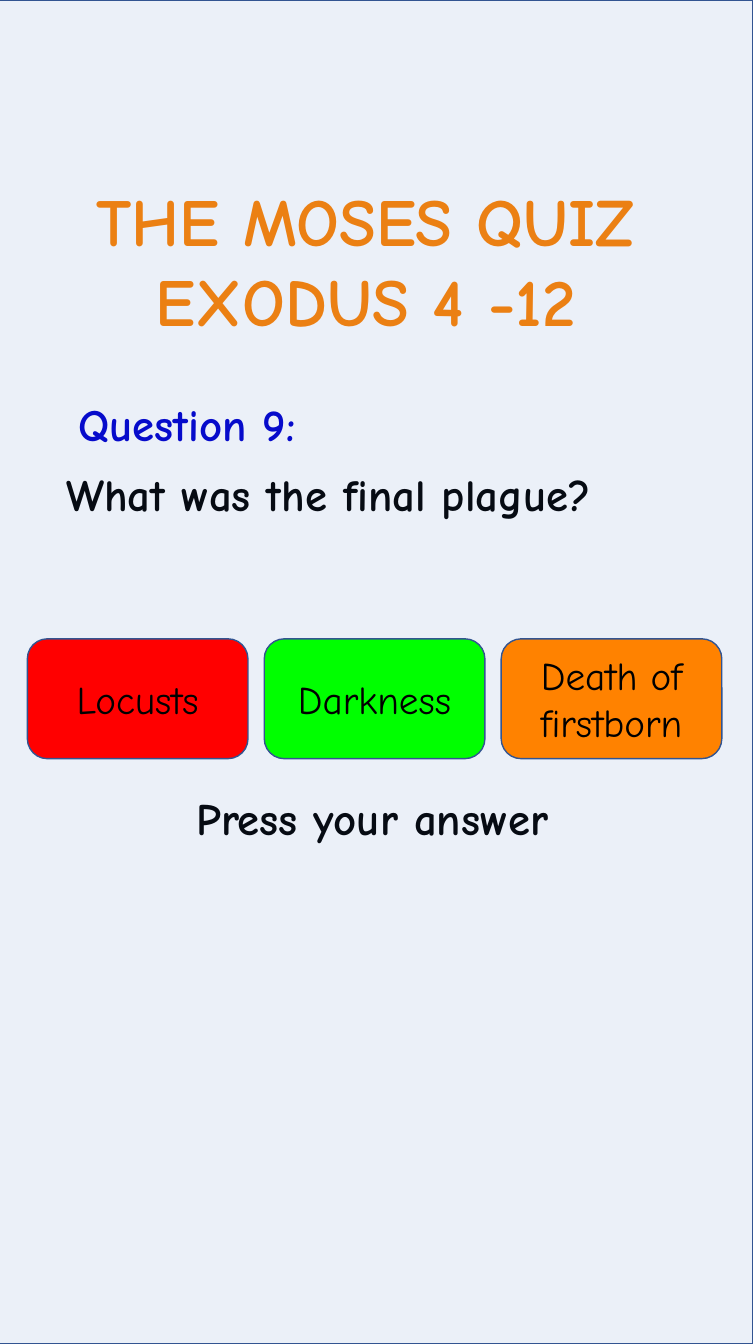
from dataclasses import dataclass

from lxml.etree import SubElement
from pptx import Presentation
from pptx.dml.color import RGBColor
from pptx.enum.shapes import MSO_SHAPE as Preset
from pptx.enum.text import MSO_ANCHOR as Anchor, MSO_AUTO_SIZE as AutoSize, PP_ALIGN as Align
from pptx.oxml import parse_xml
from pptx.oxml.ns import nsdecls, qn
from pptx.util import Cm, Pt

COLORS = {
    "paper": "FFFFFF",
    "veil": "4472C4",
    "border": "325491",
    "orange": "FF8200",
    "red": "FF0000",
    "green": "00FF00",
    "blue": "0000CC",
    "black": "000000",
}
FONT = "Comic Neue"
SLIDE_WIDTH, SLIDE_HEIGHT = Cm(19.05), Cm(33.87)
ANSWER_LEFT, ANSWER_TOP, ANSWER_PITCH = 0.69, 16.1, 5.97
ANSWER_WIDTH, ANSWER_HEIGHT = 5.56, 3.02


@dataclass
class Caption:
    lines: list[str]
    left: float
    top: float
    width: float
    height: float
    color: str
    paragraph_format: dict
    size: int = 32
    wraps: bool = True
    outline: str | None = None


@dataclass
class Answer:
    text: str
    color: str


CAPTIONS = [
    Caption(["THE MOSES QUIZ ", "EXODUS 4 -12 "], 0.76, 4.39, 17.5, 4.37, "orange",
            {"alignment": Align.CENTER}, size=48, wraps=False, outline="red"),
    Caption(["Question 9:"], 1.19, 9.88, 7.04, 1.63, "blue",
            {"alignment": Align.CENTER}, wraps=False),
    Caption(["What was the final plague?"], 1.42, 11.58, 16.15, 3.71, "black",
            {"line_spacing": Pt(40), "space_before": Pt(7.5)}),
    Caption(["Press your answer"], 4.7, 19.96, 10.72, 1.83, "black",
            {"line_spacing": 0.9, "space_before": Pt(7.5)}),
]
ANSWERS = [
    Answer("Locusts", "red"),
    Answer("Darkness", "green"),
    Answer("Death of firstborn", "orange"),
]


def rgb(name: str) -> RGBColor:
    return RGBColor.from_string(COLORS[name])


def set_all(target, values: dict) -> None:
    for name, value in values.items():
        setattr(target, name, value)


def add_text(para, text: str, size: int, color: str, bold: bool, outline: str | None = None) -> None:
    span = para.add_run()
    span.text = text
    set_all(span.font, {"name": FONT, "size": Pt(size), "bold": bold})
    span.font.color.rgb = rgb(color)
    if outline:
        span.font._element.insert(0, parse_xml(
            f'<a:ln {nsdecls("a")} w="{Pt(1.06)}"><a:solidFill>'
            f'<a:srgbClr val="{COLORS[outline]}"/></a:solidFill></a:ln>'))


def add_caption(page, caption: Caption) -> None:
    box = page.shapes.add_textbox(
        Cm(caption.left), Cm(caption.top), Cm(caption.width), Cm(caption.height))
    frame = box.text_frame
    set_all(frame, {
        "word_wrap": caption.wraps,
        "auto_size": AutoSize.NONE if caption.wraps else AutoSize.SHAPE_TO_FIT_TEXT,
    })
    for index, line in enumerate(caption.lines):
        para = frame.add_paragraph() if index else frame.paragraphs[0]
        set_all(para, caption.paragraph_format)
        add_text(para, line, caption.size, caption.color, True, caption.outline)


def add_panel(page, preset: Preset, left: int, top: int, width: int, height: int, color: str):
    panel = page.shapes.add_shape(preset, left, top, width, height)
    panel.shadow.inherit = False
    panel.fill.solid()
    panel.fill.fore_color.rgb = rgb(color)
    panel.line.color.rgb = rgb("border")
    panel.line.width = Pt(1)
    return panel


def add_veil(page) -> None:
    veil = add_panel(page, Preset.RECTANGLE, Cm(-0.08), 0, SLIDE_WIDTH, SLIDE_HEIGHT, "veil")
    fill_color = veil._element.spPr.find(qn("a:solidFill")).find(qn("a:srgbClr"))
    SubElement(fill_color, qn("a:alpha")).set("val", "10000")


def add_answer(page, answer: Answer, column: int) -> None:
    button = add_panel(page, Preset.ROUNDED_RECTANGLE,
                       Cm(ANSWER_LEFT + column * ANSWER_PITCH), Cm(ANSWER_TOP),
                       Cm(ANSWER_WIDTH), Cm(ANSWER_HEIGHT), answer.color)
    set_all(button.text_frame, {"word_wrap": True, "vertical_anchor": Anchor.MIDDLE})
    para = button.text_frame.paragraphs[0]
    para.alignment = Align.CENTER
    add_text(para, answer.text, 28, "black", False)


def main() -> None:
    deck = Presentation()
    set_all(deck, {"slide_width": SLIDE_WIDTH, "slide_height": SLIDE_HEIGHT})
    page = deck.slides.add_slide(deck.slide_layouts[6])
    page.background.fill.solid()
    page.background.fill.fore_color.rgb = rgb("paper")
    for caption in CAPTIONS:
        add_caption(page, caption)
    add_veil(page)
    for column, answer in enumerate(ANSWERS):
        add_answer(page, answer, column)
    deck.save("out.pptx")


if __name__ == "__main__":
    main()
